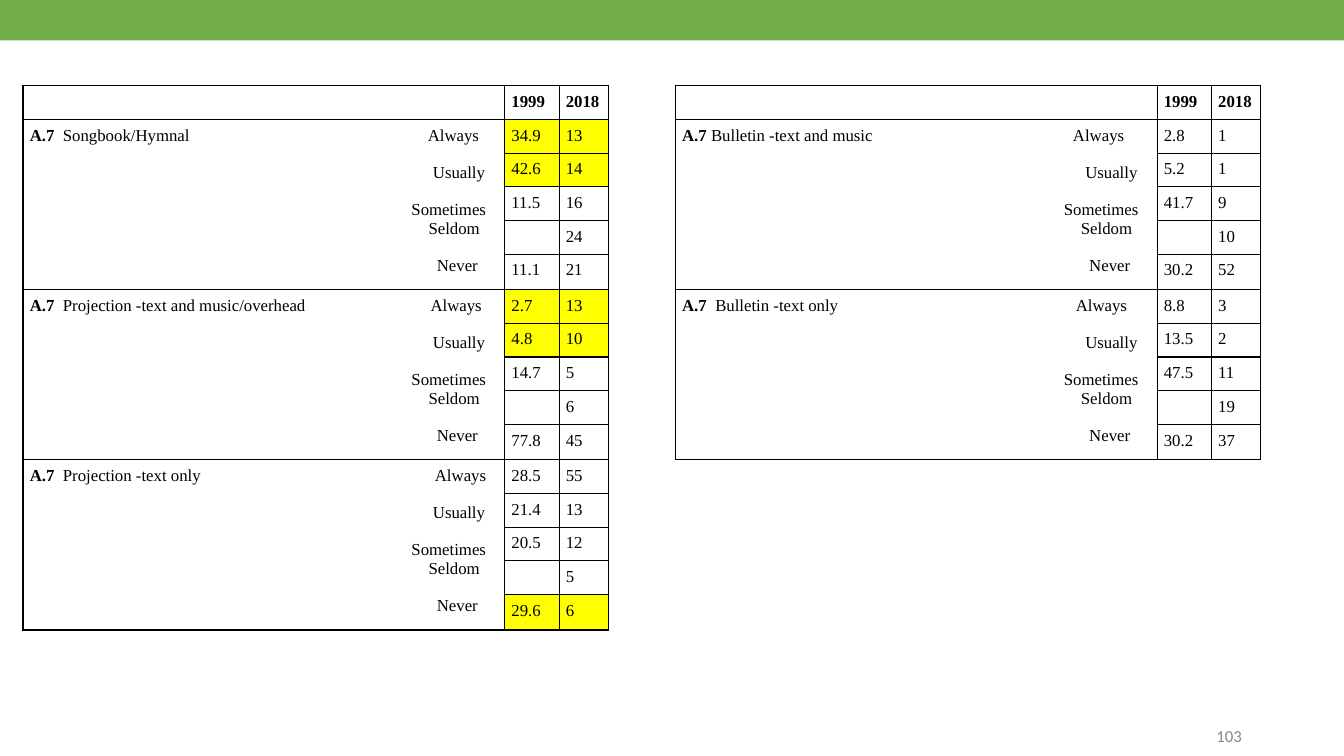
from dataclasses import dataclass
from lxml.etree import SubElement
from pptx import Presentation
from pptx.dml.color import RGBColor
from pptx.enum.shapes import MSO_SHAPE
from pptx.enum.text import MSO_ANCHOR, PP_ALIGN
from pptx.oxml.ns import qn
from pptx.util import Cm, Pt

HUES: dict[str, str] = {
    "bar": "70AD47", "mark": "FFFF00", "ink": "000000", "page": "888888",
}
SERIF = "Times New Roman"
COLS = (12.14, 1.37, 1.24)
ROW = 0.82
PAD = 0.17
YEARS = ("1999", "2018")


@dataclass(frozen=True)
class Label:
    text: str
    left: float
    gap: float


@dataclass(frozen=True)
class Group:
    code: str
    name: str
    tab: float
    old: tuple[str, ...]
    new: tuple[str, ...]
    marks: tuple[int, ...] = ()


@dataclass(frozen=True)
class Panel:
    left: float
    groups: tuple[Group, ...]


LABELS = (
    Label("Usually", 10.16, 13.3),
    Label("Sometimes", 9.62, 13.3),
    Label("Seldom", 10.05, 0),
    Label("Never", 10.26, 13.3),
)
SPAN = len(LABELS) + 1

PANELS = (
    Panel(0.58, (
        Group("A.7  ", "Songbook/Hymnal", 10.03,
              ("34.9", "42.6", "11.5", "", "11.1"),
              ("13", "14", "16", "24", "21"), (0, 1)),
        Group("A.7  ", "Projection -text and music/overhead", 10.1,
              ("2.7", "4.8", "14.7", "", "77.8"),
              ("13", "10", "5", "6", "45"), (0, 1)),
        Group("A.7  ", "Projection -text only", 10.21,
              ("28.5", "21.4", "20.5", "", "29.6"),
              ("55", "13", "12", "5", "6"), (4,)),
    )),
    Panel(17.02, (
        Group("A.7 ", "Bulletin -text and music", 9.85,
              ("2.8", "5.2", "41.7", "", "30.2"),
              ("1", "1", "9", "10", "52")),
        Group("A.7  ", "Bulletin -text only", 9.92,
              ("8.8", "13.5", "47.5", "", "30.2"),
              ("3", "2", "11", "19", "37")),
    )),
)


def tint(name: str) -> RGBColor:
    return RGBColor.from_string(HUES[name])


def style(run, bold: bool = False, face: str = SERIF, hue: str = "ink") -> None:
    run.font.name = face
    run.font.size = Pt(12)
    run.font.bold = bold
    run.font.color.rgb = tint(hue)


def frame(cell) -> None:
    cell.margin_left = cell.margin_right = Cm(PAD)
    cell.margin_top = cell.margin_bottom = Cm(PAD)
    cell.vertical_anchor = MSO_ANCHOR.TOP
    props = cell._tc.get_or_add_tcPr()
    for side in ("lnL", "lnR", "lnT", "lnB"):
        line = SubElement(props, qn(f"a:{side}"), w=str(Pt(1)))
        solid = SubElement(line, qn("a:solidFill"))
        SubElement(solid, qn("a:srgbClr"), val=HUES["ink"])
    cell.fill.background()
    para = cell.text_frame.paragraphs[0]
    SubElement(para._p, qn("a:endParaRPr"), sz="1200")


def write(cell, text: str, bold: bool = False, mark: bool = False) -> None:
    if text:
        cell.text_frame.text = text
        style(cell.text_frame.paragraphs[0].runs[0], bold)
    if mark:
        cell.fill.solid()
        cell.fill.fore_color.rgb = tint("mark")


def head(cell, group: Group) -> None:
    body = cell.text_frame
    first = body.paragraphs[0]
    tabs = SubElement(first._p.get_or_add_pPr(), qn("a:tabLst"))
    SubElement(tabs, qn("a:tab"), pos=str(Cm(group.tab)), algn="l")
    for text, bold in ((group.code, True), (f"{group.name}\tAlways", False)):
        run = first.add_run()
        run.text = text
        style(run, bold)
    for label in LABELS:
        para = body.add_paragraph()
        para.text = label.text
        para.space_before = Pt(label.gap)
        props = para._p.get_or_add_pPr()
        props.set("marL", str(Cm(label.left)))
        props.set("indent", "0")
        style(para.runs[0])


def draw(slide, panel: Panel) -> None:
    count = 1 + SPAN * len(panel.groups)
    grid = slide.shapes.add_table(
        count, len(COLS), Cm(panel.left), Cm(2.16), Cm(sum(COLS)), Cm(ROW * count)
    ).table
    grid.first_row = grid.horz_banding = False
    for col, width in zip(grid.columns, COLS):
        col.width = Cm(width)
    for row in grid.rows:
        row.height = Cm(ROW)
        for cell in row.cells:
            frame(cell)
    for col, year in enumerate(YEARS, 1):
        write(grid.cell(0, col), year, bold=True)
    for order, group in enumerate(panel.groups):
        top = 1 + SPAN * order
        grid.cell(top, 0).merge(grid.cell(top + SPAN - 1, 0))
        head(grid.cell(top, 0), group)
        for step, pair in enumerate(zip(group.old, group.new)):
            for col, value in enumerate(pair, 1):
                write(grid.cell(top + step, col), value, mark=step in group.marks)


def main() -> None:
    """Build the slide that compares worship text sources in 1999 and 2018."""
    deck = Presentation()
    deck.slide_width, deck.slide_height = Cm(33.87), Cm(19.05)
    slide = deck.slides.add_slide(deck.slide_layouts[6])

    page = slide.shapes.add_textbox(Cm(23.93), Cm(18.03), Cm(7.62), Cm(1.02))
    body = page.text_frame
    body.word_wrap = True
    body.vertical_anchor = MSO_ANCHOR.MIDDLE
    body.text = "103"
    body.paragraphs[0].alignment = PP_ALIGN.RIGHT
    style(body.paragraphs[0].runs[0], face="Calibri", hue="page")

    bar = slide.shapes.add_shape(
        MSO_SHAPE.RECTANGLE, 0, 0, deck.slide_width, Cm(1.02)
    )
    bar.shadow.inherit = False
    bar.fill.solid()
    bar.fill.fore_color.rgb = tint("bar")
    bar.line.fill.background()

    for panel in PANELS:
        draw(slide, panel)
    deck.save("out.pptx")


if __name__ == "__main__":
    main()
